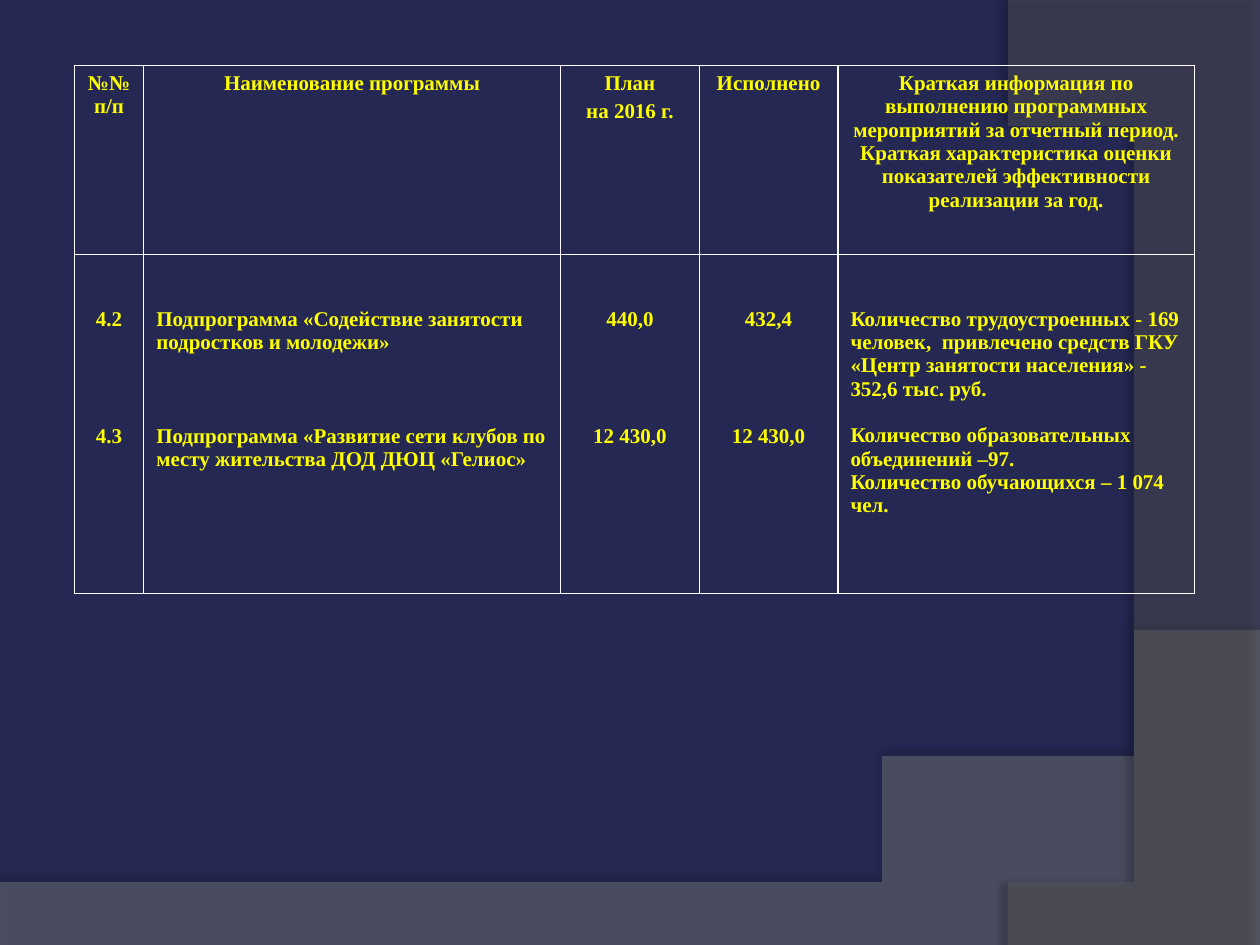
"""Build a slide with a table of youth subprogramme results for 2016."""
import lxml.etree
import pptx
import pptx.dml.color
import pptx.enum.text
import pptx.oxml
import pptx.oxml.ns
import pptx.util

Inches = pptx.util.Inches
Pt = pptx.util.Pt
RGBColor = pptx.dml.color.RGBColor
qn = pptx.oxml.ns.qn

NAVY = RGBColor(0x24, 0x28, 0x52)
WAVE_GRAY = RGBColor(0x7F, 0x7F, 0x7F)
ARC_GRAY = RGBColor(0x5E, 0x5E, 0x5E)
YELLOW = RGBColor(0xFF, 0xFF, 0x00)
WHITE = RGBColor(0xFF, 0xFF, 0xFF)
CENTER = pptx.enum.text.PP_ALIGN.CENTER
LEFT = pptx.enum.text.PP_ALIGN.LEFT
LINE = 13.4
CURVE_STEPS = 60


def curve_points(start, control_1, control_2, end):
    points = []
    for step in range(1, CURVE_STEPS + 1):
        t = step / CURVE_STEPS
        weights = ((1 - t) ** 3, 3 * t * (1 - t) ** 2, 3 * t ** 2 * (1 - t), t ** 3)
        corners = (start, control_1, control_2, end)
        points.append(tuple(sum(w * c[axis] for w, c in zip(weights, corners)) for axis in (0, 1)))
    return points


def add_swoosh(slide, points, color, opacity, shadow_opacity, distance, angle):
    builder = slide.shapes.build_freeform(*points[0], scale=Inches(1))
    builder.add_line_segments(points[1:], close=True)
    swoosh = builder.convert_to_shape()
    swoosh.fill.solid()
    swoosh.fill.fore_color.rgb = color
    swoosh.line.fill.background()
    properties = swoosh.element.spPr
    fill_color = properties.find(qn("a:solidFill")).find(qn("a:srgbClr"))
    lxml.etree.SubElement(fill_color, qn("a:alpha"), val=str(opacity * 1000))
    effects = lxml.etree.SubElement(properties, qn("a:effectLst"))
    shadow = lxml.etree.SubElement(
        effects, qn("a:outerShdw"), blurRad=str(Pt(4)), dist=str(Pt(distance)),
        dir=str(angle * 60000), algn="ctr", rotWithShape="0")
    shadow_color = lxml.etree.SubElement(shadow, qn("a:srgbClr"), val="000000")
    lxml.etree.SubElement(shadow_color, qn("a:alpha"), val=str(shadow_opacity * 1000))


presentation = pptx.Presentation()
presentation.slide_width = Inches(10)
presentation.slide_height = Inches(7.5)
slide = presentation.slides.add_slide(presentation.slide_layouts[6])
slide.background.fill.solid()
slide.background.fill.fore_color.rgb = NAVY

wave = [(0, 7.05), (0, 7.5), (10, 7.5), (10, 5.2)]
wave += curve_points((10, 5.2), (5.59, 7.29), (3.91, 7.19), (0, 7.05))
add_swoosh(slide, wave, WAVE_GRAY, 45, 35, 3.5, 270)

arc = [(10, 0.02), (10, 7.5), (8.21, 7.5)]
arc += curve_points((8.21, 7.5), (9.35, 6.19), (10.18, 3), (8, 0))
add_swoosh(slide, arc, ARC_GRAY, 40, 45, 4, 180)

column_widths = [0.55, 3.31, 1.1, 1.1, 2.83]
row_heights = [1.5, 2.69]
top_margins = [0.05, 0.42]
alignments = [
    [CENTER] * 5,
    [CENTER, LEFT, CENTER, CENTER, LEFT],
]
rows = [
    [
        [("№№ п/п", 0)],
        [("Наименование программы", 0)],
        [("План", 0), ("на 2016 г.", 2.6)],
        [("Исполнено", 0)],
        [("Краткая информация по выполнению программных мероприятий за отчетный период. "
          "Краткая характеристика оценки показателей эффективности реализации за год.", 0)],
    ],
    [
        [("4.2", 0), ("4.3", 4 * LINE)],
        [("Подпрограмма «Содействие занятости подростков и молодежи»", 0),
         ("Подпрограмма «Развитие сети клубов по месту жительства ДОД ДЮЦ «Гелиос»", 3 * LINE)],
        [("440,0", 0), ("12 430,0", 4 * LINE)],
        [("432,4", 0), ("12 430,0", 4 * LINE)],
        [("Количество трудоустроенных - 169 человек,  привлечено средств ГКУ "
          "«Центр занятости населения» - 352,6 тыс. руб.", 0),
         ("Количество образовательных объединений –97.", LINE),
         ("Количество обучающихся – 1 074 чел.", 0)],
    ],
]

programmes = slide.shapes.add_table(
    len(rows), len(column_widths), Inches(0.59), Inches(0.52),
    Inches(sum(column_widths)), Inches(sum(row_heights))).table
programmes.first_row = False
programmes.horz_banding = False
for column, width in zip(programmes.columns, column_widths):
    column.width = Inches(width)

for row_index, row in enumerate(rows):
    programmes.rows[row_index].height = Inches(row_heights[row_index])
    for column_index, paragraphs in enumerate(row):
        cell = programmes.cell(row_index, column_index)
        cell.margin_top = Inches(top_margins[row_index])
        cell_properties = cell._tc.get_or_add_tcPr()
        for side in ("a:lnL", "a:lnR", "a:lnT", "a:lnB"):
            border = lxml.etree.SubElement(cell_properties, qn(side), w=str(Pt(1)))
            border_fill = lxml.etree.SubElement(border, qn("a:solidFill"))
            lxml.etree.SubElement(border_fill, qn("a:srgbClr"), val=str(WHITE))
        cell.fill.background()
        for index, (text, space_before) in enumerate(paragraphs):
            frame = cell.text_frame
            paragraph = frame.add_paragraph() if index else frame.paragraphs[0]
            paragraph.alignment = alignments[row_index][column_index]
            if space_before:
                paragraph.space_before = Pt(space_before)
            run = paragraph.add_run()
            run.text = text
            run.font.name = "Times New Roman"
            run.font.size = Pt(12)
            run.font.bold = True
            run.font.color.rgb = YELLOW

presentation.save("out.pptx")
